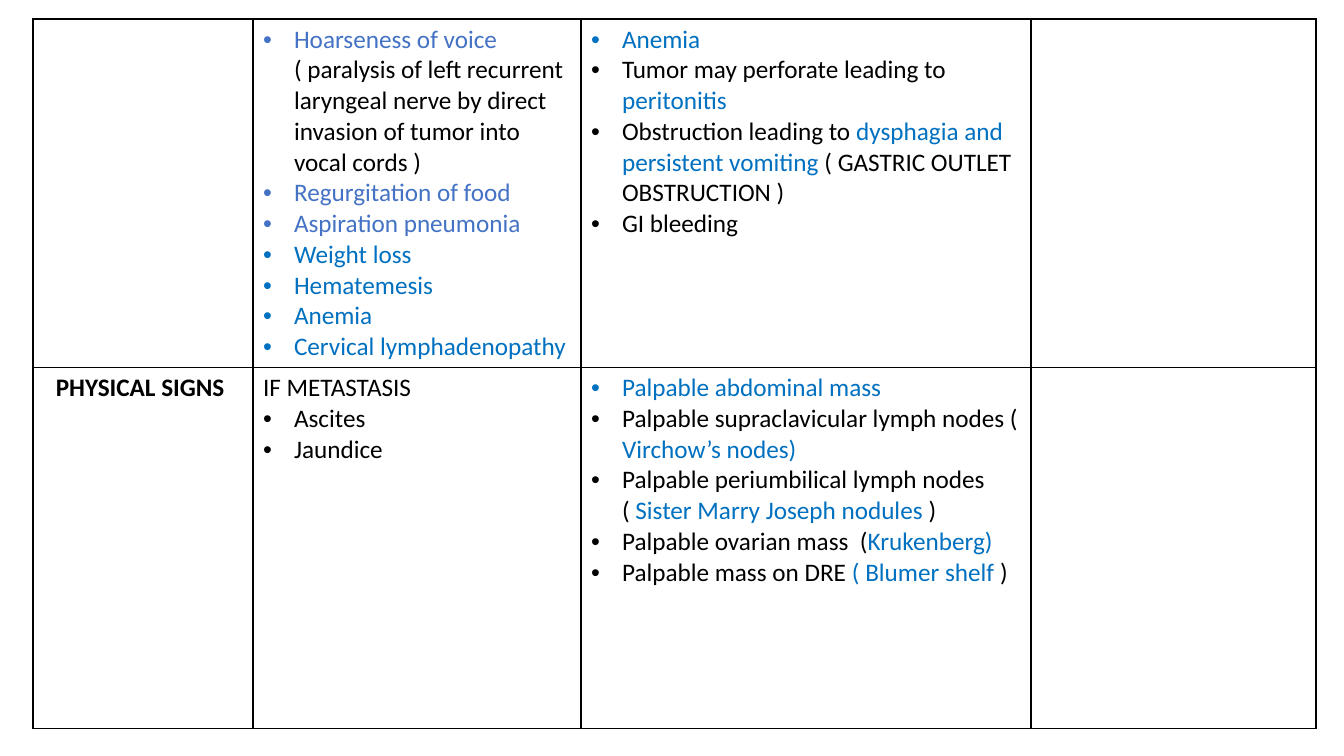
from lxml.etree import SubElement
from pptx import Presentation
from pptx.dml.color import RGBColor
from pptx.enum.text import PP_ALIGN
from pptx.oxml.ns import qn
from pptx.util import Pt

PX = 914400 / 100.8
BLACK = RGBColor(0x00, 0x00, 0x00)
BLUE = RGBColor(0x00, 0x70, 0xC0)
SOFT = RGBColor(0x44, 0x72, 0xC4)
FONT = {"name": "Calibri", "size": Pt(18), "bold": False}
PLAIN = {"first_row": False, "horz_banding": False}
INDENT = 31
COLS = [220, 328, 450, 285]
ROWS = [345, 361]


def px(n):
    return round(n * PX)


def add_border(cell):
    """Draw a thin black line on all four sides of a cell."""
    props = cell._tc.get_or_add_tcPr()
    for side in ("lnL", "lnR", "lnT", "lnB"):
        line = SubElement(props, qn(f"a:{side}"), w=str(Pt(1)))
        fill = SubElement(line, qn("a:solidFill"))
        SubElement(fill, qn("a:srgbClr"), val=str(BLACK))


# Each cell holds paragraphs, each paragraph holds (text, colour) runs.
VOICE = [
    [("Hoarseness of voice ", SOFT),
     ("( paralysis of left recurrent laryngeal nerve by direct "
      "invasion of tumor into vocal cords )", BLACK)],
    [("Regurgitation of food", SOFT)],
    [("Aspiration pneumonia", SOFT)],
    [("Weight loss", BLUE)],
    [("Hematemesis", BLUE)],
    [("Anemia", BLUE)],
    [("Cervical lymphadenopathy", BLUE)],
]
GASTRIC = [
    [("Anemia", BLUE)],
    [("Tumor may perforate leading to ", BLACK), ("peritonitis", BLUE)],
    [("Obstruction leading to ", BLACK),
     ("dysphagia and persistent vomiting ", BLUE),
     ("( GASTRIC OUTLET OBSTRUCTION )", BLACK)],
    [("GI bleeding", BLACK)],
]
SIGNS = [[("PHYSICAL SIGNS ", BLACK)]]
SPREAD = [
    [("IF METASTASIS", BLACK)],
    [("Ascites", BLACK)],
    [("Jaundice", BLACK)],
]
MASSES = [
    [("Palpable abdominal mass", BLUE)],
    [("Palpable supraclavicular lymph nodes ( ", BLACK),
     ("Virchow’s nodes)", BLUE)],
    [("Palpable periumbilical lymph nodes ( ", BLACK),
     ("Sister Marry Joseph nodules ", BLUE), (")", BLACK)],
    [("Palpable ovarian mass  (", BLACK), ("Krukenberg)", BLUE)],
    [("Palpable mass on DRE ", BLACK), ("( Blumer shelf ", BLUE),
     (")", BLACK)],
]
GRID = [[[], VOICE, GASTRIC, []], [SIGNS, SPREAD, MASSES, []]]
HEADS = ("PHYSICAL SIGNS ", "IF METASTASIS")

deck = Presentation()
deck.slide_width, deck.slide_height = px(1344), px(756)
slide = deck.slides.add_slide(deck.slide_layouts[6])
table = slide.shapes.add_table(
    len(ROWS), len(COLS), px(33), px(19), px(sum(COLS)), px(sum(ROWS))).table
for key, value in PLAIN.items():
    setattr(table, key, value)
for col, width in zip(table.columns, COLS):
    col.width = px(width)
for row, height in zip(table.rows, ROWS):
    row.height = px(height)

for r, line in enumerate(GRID):
    for c, paras in enumerate(line):
        cell = table.cell(r, c)
        add_border(cell)
        cell.fill.background()
        frame = cell.text_frame
        for i, runs in enumerate(paras):
            para = frame.add_paragraph() if i else frame.paragraphs[0]
            if runs[0][0] not in HEADS:
                props = para._p.get_or_add_pPr()
                props.set("marL", str(px(INDENT)))
                props.set("indent", str(-px(INDENT)))
                SubElement(props, qn("a:buFont"), typeface="Arial")
                SubElement(props, qn("a:buChar"), char="•")
            for text, colour in runs:
                run = para.add_run()
                run.text = text
                for key, value in FONT.items():
                    setattr(run.font, key, value)
                run.font.color.rgb = colour

title = table.cell(1, 0).text_frame.paragraphs[0]
title.alignment = PP_ALIGN.CENTER
title.runs[0].font.bold = True

deck.save("out.pptx")
